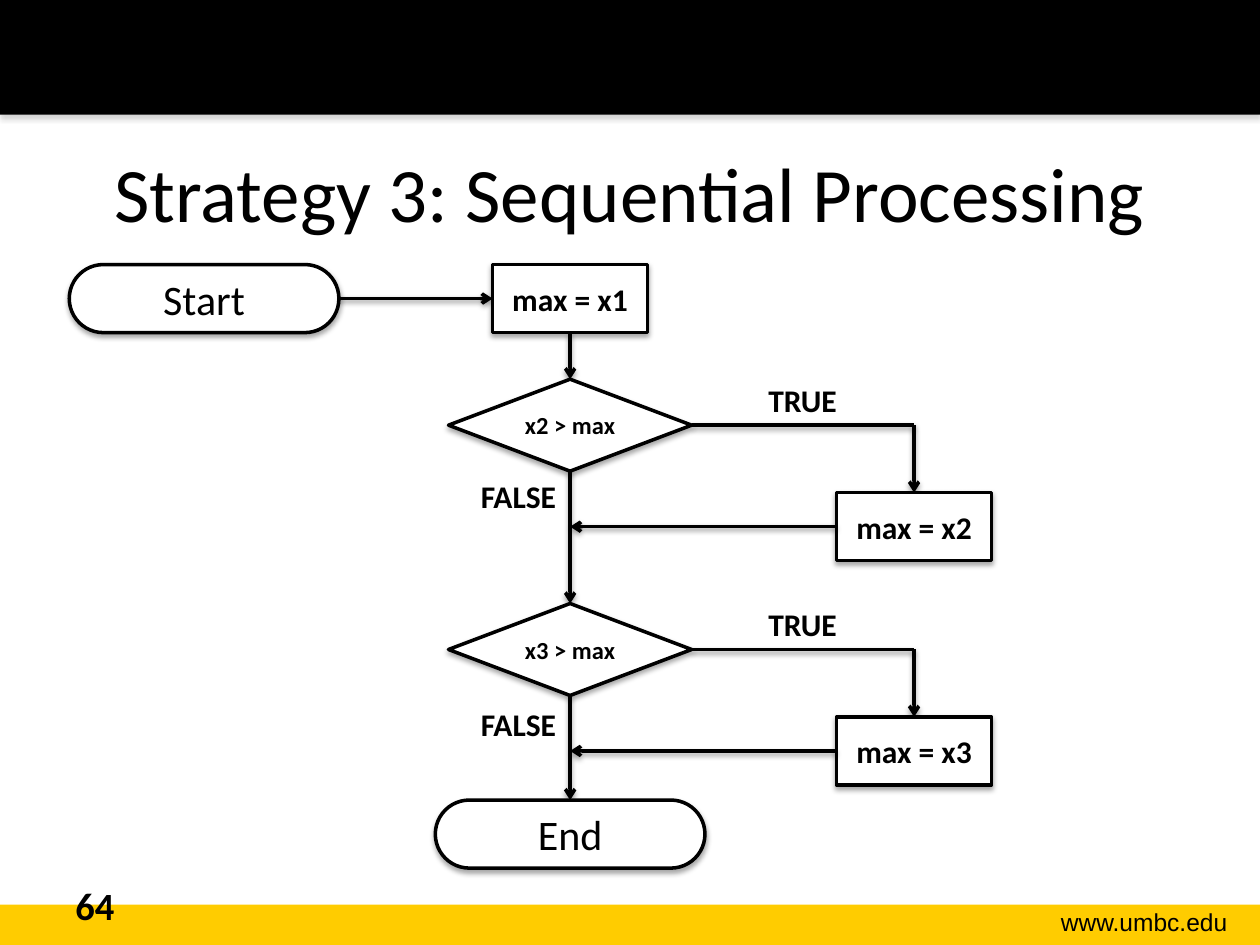
from dataclasses import dataclass
from typing import Any

import lxml.etree
import pptx
import pptx.dml.color
import pptx.enum.shapes
import pptx.enum.text
import pptx.oxml.ns
import pptx.util

Pt = pptx.util.Pt
Kind = pptx.enum.shapes.MSO_SHAPE
Align = pptx.enum.text.PP_ALIGN
Anchor = pptx.enum.text.MSO_ANCHOR
qn = pptx.oxml.ns.qn


@dataclass(frozen=True)
class Theme:
    ink: str = "000000"
    paper: str = "FFFFFF"
    gold: str = "FFCC00"
    gray: str = "808080"
    face: str = "Calibri"
    plain: str = "Arial"
    title: int = 44
    end: int = 24
    page: int = 22
    label: int = 18
    test: int = 14
    line: int = 2


@dataclass(frozen=True)
class Box:
    """Place on a grid of 100 columns and 75 rows."""
    x: float
    y: float
    w: float
    h: float


@dataclass(frozen=True)
class Stage:
    top: float
    test: str
    act: str
    no_top: float
    next_top: float


theme = Theme()
deck = pptx.Presentation()
deck.slide_width = pptx.util.Inches(10)
deck.slide_height = pptx.util.Inches(7.5)
slide = deck.slides.add_slide(deck.slide_layouts[6])
COL = deck.slide_width / 100
ROW = deck.slide_height / 75


def spot(x: float, y: float) -> tuple[int, int]:
    return round(x * COL), round(y * ROW)


def area(box: Box) -> tuple[int, int, int, int]:
    return spot(box.x, box.y) + spot(box.w, box.h)


def tint(code: str) -> pptx.dml.color.RGBColor:
    return pptx.dml.color.RGBColor.from_string(code)


def put(item: Any, values: dict[str, Any]) -> None:
    for name, value in values.items():
        setattr(item, name, value)


def shade(item: Any, color: str, alpha: int, drop: float) -> None:
    """Add a soft shadow below a shape or line."""
    props = item.element.spPr
    for old in props.findall(qn("a:effectLst")):
        props.remove(old)
    group = lxml.etree.SubElement(props, qn("a:effectLst"))
    cast = lxml.etree.SubElement(group, qn("a:outerShdw"), {
        "blurRad": str(Pt(3.1)), "dist": str(Pt(drop)),
        "dir": "5400000", "rotWithShape": "0"})
    tone = lxml.etree.SubElement(cast, qn("a:srgbClr"), val=color)
    lxml.etree.SubElement(tone, qn("a:alpha"), val=str(alpha * 1000))


def write(item: Any, text: str, size: int, bold: bool = False,
          align: Any = Align.CENTER, anchor: Any = Anchor.MIDDLE,
          face: str = theme.face) -> None:
    frame = item.text_frame
    put(frame, {"word_wrap": True, "vertical_anchor": anchor})
    para = frame.paragraphs[0]
    para.alignment = align
    run = para.add_run()
    run.text = text
    put(run.font, {"name": face, "size": Pt(size), "bold": bold})
    run.font.color.rgb = tint(theme.ink)


def label(box: Box, text: str, size: int, **style: Any) -> None:
    write(slide.shapes.add_textbox(*area(box)), text, size, **style)


def band(box: Box, color: str) -> Any:
    item = slide.shapes.add_shape(Kind.RECTANGLE, *area(box))
    item.shadow.inherit = False
    item.fill.solid()
    item.fill.fore_color.rgb = tint(color)
    item.line.fill.background()
    return item


def node(kind: Any, box: Box, text: str, size: int, bold: bool = True) -> None:
    item = slide.shapes.add_shape(kind, *area(box))
    if kind == Kind.ROUNDED_RECTANGLE:
        item.adjustments[0] = 0.5
    item.fill.solid()
    item.fill.fore_color.rgb = tint(theme.paper)
    item.line.color.rgb = tint(theme.ink)
    item.line.width = Pt(theme.line)
    shade(item, theme.ink, 35, 1.8)
    write(item, text, size, bold)


def link(x1: float, y1: float, x2: float, y2: float, head: bool = True) -> None:
    item = slide.shapes.add_connector(
        pptx.enum.shapes.MSO_CONNECTOR.STRAIGHT, *spot(x1, y1), *spot(x2, y2))
    item.line.color.rgb = tint(theme.ink)
    item.line.width = Pt(theme.line)
    if head:
        lxml.etree.SubElement(item.line._get_or_add_ln(), qn("a:tailEnd"), type="arrow")
    shade(item, theme.ink, 38, 1.6)


# Flow measures
AXIS, SIDE = 45.25, 72.55
PILL_W, CARD_W, TEST_W = 21.4, 12.3, 19.3
NODE_H, TEST_H = 5.4, 7.3
START_X, START_Y, END_Y = 5.5, 21, 63.5
STAGES = [
    Stage(30.1, "x2 > max", "max = x2", 37.4, 47.9),
    Stage(47.9, "x3 > max", "max = x3", 55.5, END_Y),
]


def step(stage: Stage) -> None:
    """Draw one test with its action and both branches."""
    mid = stage.top + TEST_H / 2
    act_y = stage.top + 9
    back = act_y + NODE_H / 2
    node(Kind.FLOWCHART_DECISION, Box(AXIS - TEST_W / 2, stage.top, TEST_W, TEST_H),
         stage.test, theme.test)
    label(Box(37, stage.no_top, 8.3, 4), "FALSE", theme.label, bold=True, anchor=Anchor.TOP)
    label(Box(58.9, stage.top - 0.35, 9.6, 4), "TRUE", theme.label, bold=True,
          anchor=Anchor.TOP)
    link(SIDE, mid, SIDE, act_y)
    link(AXIS, stage.top + TEST_H, AXIS, stage.next_top)
    link(AXIS + TEST_W / 2, mid, SIDE, mid, head=False)
    node(Kind.RECTANGLE, Box(SIDE - CARD_W / 2, act_y, CARD_W, NODE_H),
         stage.act, theme.label)
    link(SIDE - CARD_W / 2, back, AXIS, back)


# Page frame
band(Box(0, 71.8, 100, 3.2), theme.gold)
shade(band(Box(0, 0, 100, 9.1), theme.ink), theme.gray, 35, 1.8)
label(Box(78.5, 71.5, 19.9, 3.4), "www.umbc.edu", theme.test,
      align=Align.RIGHT, anchor=Anchor.TOP, face=theme.plain)
label(Box(5, 9, 90, 12.5), "Strategy 3: Sequential Processing", theme.title)
label(Box(5, 69.5, 23.3, 4), "64", theme.page, bold=True,
      align=Align.LEFT, anchor=Anchor.TOP)

# Start of the flow
node(Kind.ROUNDED_RECTANGLE, Box(START_X, START_Y, PILL_W, NODE_H),
     "Start", theme.end, bold=False)
link(START_X + PILL_W, START_Y + NODE_H / 2, AXIS - CARD_W / 2, START_Y + NODE_H / 2)
node(Kind.RECTANGLE, Box(AXIS - CARD_W / 2, START_Y, CARD_W, NODE_H),
     "max = x1", theme.label)
link(AXIS, START_Y + NODE_H, AXIS, STAGES[0].top)

# Tests in turn, then the end
for stage in STAGES:
    step(stage)
node(Kind.ROUNDED_RECTANGLE, Box(AXIS - PILL_W / 2, END_Y, PILL_W, NODE_H),
     "End", theme.end, bold=False)

deck.save("out.pptx")
